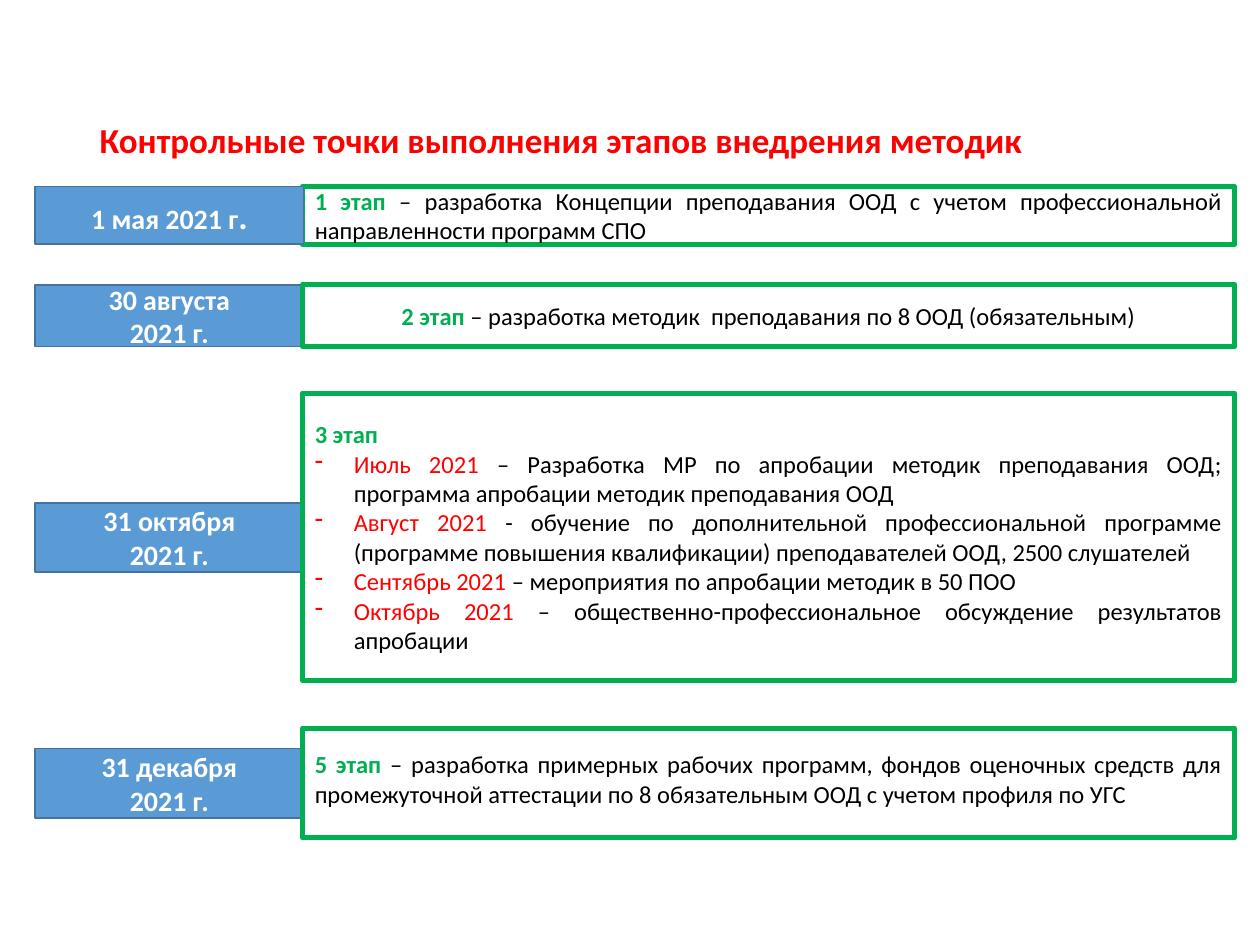
from collections import namedtuple

from lxml.etree import SubElement
from pptx import Presentation
from pptx.dml.color import RGBColor
from pptx.enum.shapes import MSO_SHAPE
from pptx.enum.text import MSO_ANCHOR, MSO_AUTO_SIZE, PP_ALIGN
from pptx.oxml.ns import qn
from pptx.util import Inches, Pt

Box = namedtuple("Box", "left top width height")
Stage = namedtuple("Stage", "date date_box paragraphs detail_box align date_in_front bottom_margin",
                   defaults=(PP_ALIGN.JUSTIFY, False, 0.05))

COLUMNS, ROWS = 100, 75
SLIDE_WIDTH, SLIDE_HEIGHT = Inches(10), Inches(7.5)
DATE_LEFT, DATE_WIDTH = 2.8, 21.3
DETAIL_LEFT, DETAIL_WIDTH = 24, 74
BULLET_INDENT = Inches(0.31)

RED, GREEN, BLACK, WHITE = "FF0000", "00B050", "000000", "FFFFFF"
BLUE, DARK_BLUE = "5B9BD5", "43739E"

TITLE_FONT = {"name": "Calibri", "size": Pt(20), "bold": True, "color": RED}
DATE_FONT = {"name": "Calibri", "size": Pt(16), "bold": True, "color": WHITE}
LARGE_DATE_FONT = {**DATE_FONT, "size": Pt(20)}
BODY_FONT = {"name": "Calibri", "size": Pt(14), "bold": False, "color": BLACK}
MONTH_FONT = {**BODY_FONT, "color": RED}
STAGE_FONT = {**BODY_FONT, "bold": True, "color": GREEN}


def hex_color(value):
    return RGBColor.from_string(value)


def place(box):
    """Turn grid units into left, top, width and height."""
    column, row = SLIDE_WIDTH / COLUMNS, SLIDE_HEIGHT / ROWS
    return (round(box.left * column), round(box.top * row),
            round(box.width * column), round(box.height * row))


def add_run(paragraph, text, font_format):
    run = paragraph.add_run()
    run.text = text
    for name, value in font_format.items():
        if name == "color":
            run.font.color.rgb = hex_color(value)
        else:
            setattr(run.font, name, value)


def add_dash(paragraph):
    properties = paragraph._p.get_or_add_pPr()
    properties.set("marL", str(BULLET_INDENT))
    properties.set("indent", str(-BULLET_INDENT))
    SubElement(properties, qn("a:buChar")).set("char", "-")


def fill_text(frame, paragraphs, align):
    """Write paragraphs, each a list of (text, font format); month entries get a dash."""
    frame.word_wrap = True
    frame.auto_size = MSO_AUTO_SIZE.NONE
    frame.vertical_anchor = MSO_ANCHOR.MIDDLE
    for index, runs in enumerate(paragraphs):
        paragraph = frame.add_paragraph() if index else frame.paragraphs[0]
        paragraph.alignment = align
        if runs[0][1] is MONTH_FONT:
            add_dash(paragraph)
        for text, font_format in runs:
            add_run(paragraph, text, font_format)


def add_panel(slide, box, line_color, line_width, fill=None):
    shape = slide.shapes.add_shape(MSO_SHAPE.RECTANGLE, *place(box))
    shape.shadow.inherit = False
    if fill:
        shape.fill.solid()
        shape.fill.fore_color.rgb = hex_color(fill)
    else:
        shape.fill.background()
    shape.line.color.rgb = hex_color(line_color)
    shape.line.width = Pt(line_width)
    return shape


def add_title(slide, box, text):
    title = slide.shapes.title
    title.left, title.top, title.width, title.height = place(box)
    fill_text(title.text_frame, [[(text, TITLE_FONT)]], PP_ALIGN.LEFT)
    title.text_frame.paragraphs[0].line_spacing = 0.9


def add_date(slide, stage):
    shape = add_panel(slide, stage.date_box, DARK_BLUE, 1, BLUE)
    fill_text(shape.text_frame, stage.date, PP_ALIGN.CENTER)


def add_detail(slide, stage):
    shape = add_panel(slide, stage.detail_box, GREEN, 3)
    fill_text(shape.text_frame, stage.paragraphs, stage.align)
    shape.text_frame.margin_bottom = Inches(stage.bottom_margin)


def add_stage(slide, stage):
    parts = [add_date, add_detail]
    for add_part in reversed(parts) if stage.date_in_front else parts:
        add_part(slide, stage)


def date_lines(*lines):
    return [[(line, DATE_FONT)] for line in lines]


def date_box(top, height):
    return Box(DATE_LEFT, top, DATE_WIDTH, height)


def detail_box(top, height):
    return Box(DETAIL_LEFT, top, DETAIL_WIDTH, height)


def stage_text(label, text):
    return [(label, STAGE_FONT), (text, BODY_FONT)]


def month_text(month, text):
    return [(month, MONTH_FONT), (text, BODY_FONT)]


STAGES = [
    Stage([[("1 мая 2021 г", DATE_FONT), (".", LARGE_DATE_FONT)]], date_box(14.8, 4.6),
          [stage_text("1 этап ", "– разработка Концепции преподавания ООД с учетом "
                      "профессиональной направленности программ СПО")],
          detail_box(14.8, 4.6), date_in_front=True),
    Stage(date_lines("30 августа", "2021 г."), date_box(22.6, 4.9),
          [stage_text("2 этап ", "– разработка методик  преподавания по 8 ООД (обязательным)")],
          detail_box(22.6, 4.9), align=PP_ALIGN.CENTER),
    Stage(date_lines("31 октября", "2021 г."), date_box(39.9, 5.5),
          [[("3 этап", STAGE_FONT)],
           month_text("Июль 2021 ", "– Разработка МР по апробации методик преподавания ООД; "
                      "программа апробации методик преподавания ООД"),
           month_text("Август 2021 ", "- обучение по дополнительной профессиональной программе "
                      "(программе повышения квалификации) преподавателей ООД, 2500 слушателей"),
           month_text("Сентябрь 2021 ", "– мероприятия по апробации методик в 50 ПОО"),
           month_text("Октябрь 2021 ", "– общественно-профессиональное обсуждение "
                      "результатов апробации")],
          detail_box(31.2, 22.8)),
    Stage(date_lines("31 декабря", "2021 г."), date_box(59.4, 5.5),
          [stage_text("5 этап ", "– разработка примерных рабочих программ, фондов оценочных "
                      "средств для промежуточной аттестации по 8 обязательным ООД "
                      "с учетом профиля по УГС")],
          detail_box(57.8, 8.7), bottom_margin=0.12),
]


def main():
    presentation = Presentation()
    presentation.slide_width, presentation.slide_height = SLIDE_WIDTH, SLIDE_HEIGHT
    slide = presentation.slides.add_slide(presentation.slide_layouts[5])
    add_title(slide, Box(6.9, 4, 86.2, 14.5),
              "Контрольные точки выполнения этапов внедрения методик")
    for stage in STAGES:
        add_stage(slide, stage)
    presentation.save("out.pptx")


if __name__ == "__main__":
    main()
